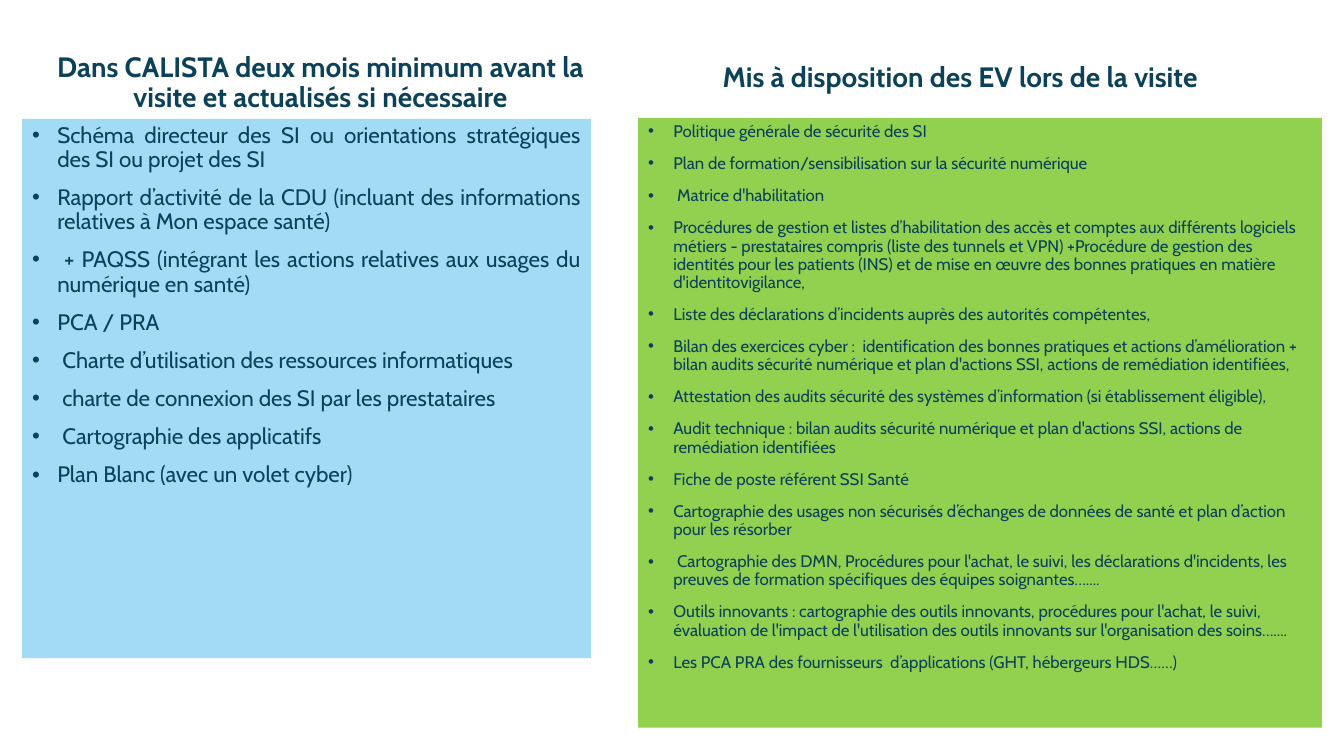
from dataclasses import dataclass

from lxml import etree
from pptx import Presentation
from pptx import util as u
from pptx.dml.color import RGBColor
from pptx.enum import text
from pptx.oxml import ns


@dataclass(frozen=True)
class Theme:
    font: str = "Cabin"
    ink: str = "0B4159"
    blue: str = "A4DBF4"
    green: str = "92D050"
    title_size: int = 20
    before_size: int = 16
    visit_size: int = 12
    indent: float = 0.25


THEME = Theme()

BEFORE_TITLE = "Dans CALISTA deux mois minimum avant la visite et actualisés si nécessaire"
BEFORE_ITEMS = [
    "Schéma directeur des SI ou orientations stratégiques des SI ou projet des SI",
    "Rapport d’activité de la CDU (incluant des informations relatives à Mon espace santé)",
    " + PAQSS (intégrant les actions relatives aux usages du numérique en santé)",
    "PCA / PRA",
    " Charte d’utilisation des ressources informatiques",
    " charte de connexion des SI par les prestataires",
    " Cartographie des applicatifs",
    "Plan Blanc (avec un volet cyber)",
]

VISIT_TITLE = "Mis à disposition des EV lors de la visite"
VISIT_ITEMS = [
    "Politique générale de sécurité des SI",
    "Plan de formation/sensibilisation sur la sécurité numérique",
    " Matrice d'habilitation",
    "Procédures de gestion et listes d’habilitation des accès et comptes aux différents "
    "logiciels métiers - prestataires compris (liste des tunnels et VPN) +Procédure de "
    "gestion des identités pour les patients (INS) et de mise en œuvre des bonnes pratiques "
    "en matière d'identitovigilance,",
    "Liste des déclarations d’incidents auprès des autorités compétentes,",
    "Bilan des exercices cyber :  identification des bonnes pratiques et actions "
    "d’amélioration + bilan audits sécurité numérique et plan d'actions SSI, actions de "
    "remédiation identifiées,",
    "Attestation des audits sécurité des systèmes d’information (si établissement éligible),",
    "Audit technique : bilan audits sécurité numérique et plan d'actions SSI, actions de "
    "remédiation identifiées",
    "Fiche de poste référent SSI Santé",
    "Cartographie des usages non sécurisés d’échanges de données de santé et plan d’action "
    "pour les résorber",
    " Cartographie des DMN, Procédures pour l'achat, le suivi, les déclarations d'incidents, "
    "les preuves de formation spécifiques des équipes soignantes…....",
    "Outils innovants : cartographie des outils innovants, procédures pour l'achat, le suivi, "
    "évaluation de l'impact de l'utilisation des outils innovants sur l'organisation des "
    "soins…....",
    "Les PCA PRA des fournisseurs  d’applications (GHT, hébergeurs HDS……)",
]


def apply(target, values):
    for name, value in values.items():
        setattr(target, name, value)


def add_bullet(para):
    props = para._p.get_or_add_pPr()
    apply_indent = u.Inches(THEME.indent)
    props.set("marL", str(apply_indent))
    props.set("indent", str(-apply_indent))
    font = etree.SubElement(props, ns.qn("a:buFont"))
    font.set("typeface", "Arial")
    etree.SubElement(props, ns.qn("a:buChar")).set("char", "•")


def add_text(page, area, lines, size, align, anchor=text.MSO_ANCHOR.TOP,
             bold=False, bullets=False, fill=None):
    box = page.shapes.add_textbox(*map(u.Inches, area))
    if fill:
        box.fill.solid()
        box.fill.fore_color.rgb = RGBColor.from_string(fill)
    frame = box.text_frame
    apply(frame, {"word_wrap": True, "vertical_anchor": anchor})
    for index, line in enumerate(lines):
        para = frame.paragraphs[0] if index == 0 else frame.add_paragraph()
        if bullets:
            add_bullet(para)
        apply(para, {"alignment": align, "line_spacing": 0.9,
                     "space_before": u.Pt(10 if index else 0)})
        span = para.add_run()
        span.text = line
        apply(span.font, {"name": THEME.font, "size": u.Pt(size), "bold": bold})
        span.font.color.rgb = RGBColor.from_string(THEME.ink)


def add_title(page, area, title):
    add_text(page, area, [title], THEME.title_size, text.PP_ALIGN.CENTER,
             anchor=text.MSO_ANCHOR.BOTTOM, bold=True)


def add_panel(page, area, items, size, align, fill):
    add_text(page, area, items, size, align, bullets=True, fill=fill)


def main():
    deck = Presentation()
    apply(deck, {"slide_width": u.Inches(13.33), "slide_height": u.Inches(7.5)})
    page = deck.slides.add_slide(deck.slide_layouts[6])
    add_title(page, (0.36, 0.28, 5.64, 0.9), BEFORE_TITLE)
    add_panel(page, (0.22, 1.18, 5.64, 5.35), BEFORE_ITEMS, THEME.before_size,
              text.PP_ALIGN.JUSTIFY, THEME.blue)
    add_title(page, (6.22, 0.49, 6.61, 0.49), VISIT_TITLE)
    add_panel(page, (6.33, 1.17, 6.78, 6.05), VISIT_ITEMS, THEME.visit_size,
              text.PP_ALIGN.LEFT, THEME.green)
    deck.save("out.pptx")


if __name__ == "__main__":
    main()
